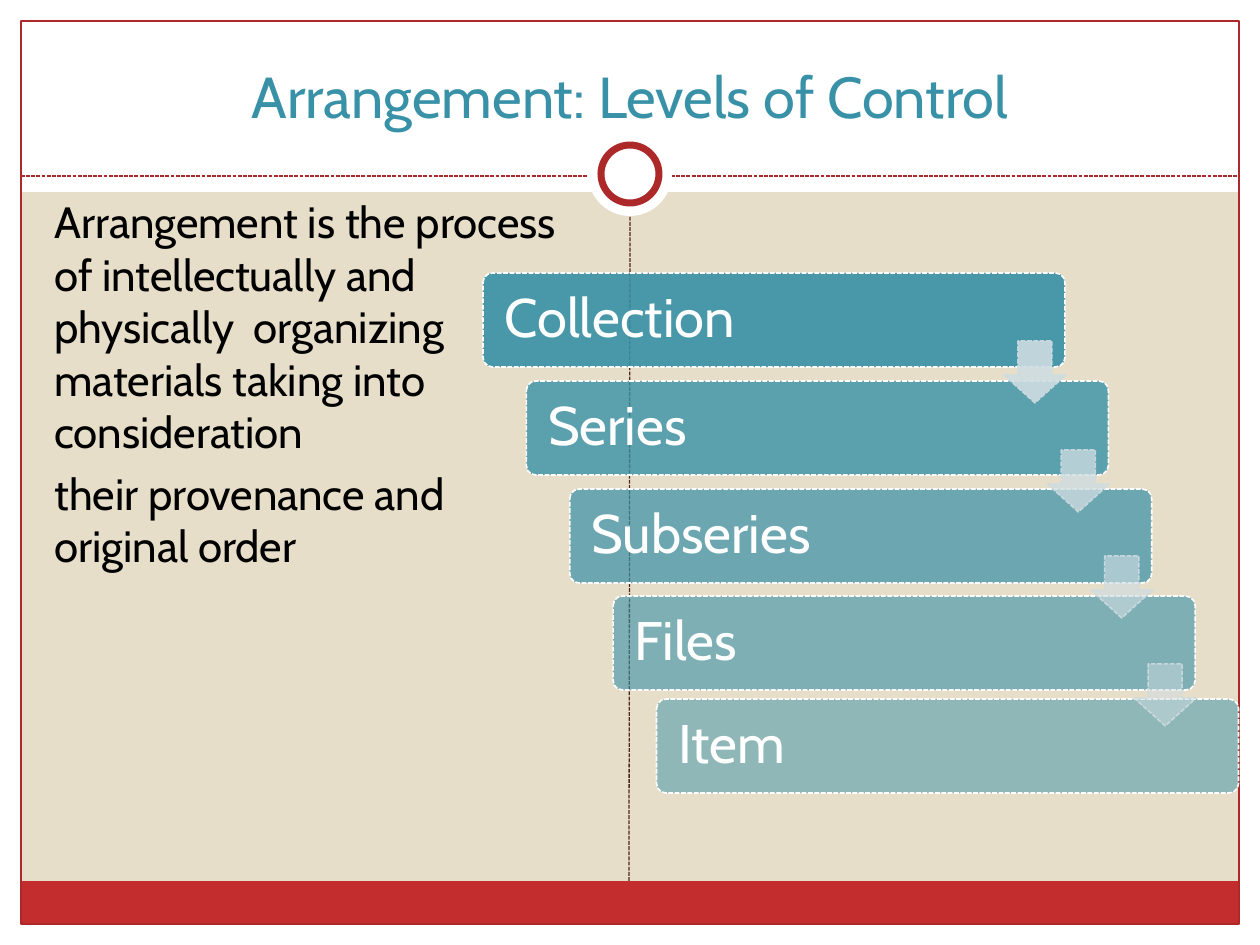
from lxml.etree import SubElement
from pptx import Presentation
from pptx.dml.color import RGBColor
from pptx.enum.dml import MSO_LINE
from pptx.enum.shapes import MSO_CONNECTOR, MSO_SHAPE as SHAPE
from pptx.enum.text import MSO_ANCHOR as ANCHOR, PP_ALIGN as ALIGN
from pptx.oxml.ns import qn
from pptx.util import Emu, Pt

# Content
TITLE = "Arrangement: Levels of Control"
BODY = [
    "Arrangement is the process of intellectually and physically  organizing "
    "materials taking into consideration",
    "their provenance and original order",
]
# level, top, opacity %
LEVELS = [
    ("Collection", 273, 90),
    ("Series", 381, 80),
    ("Subseries", 489, 70),
    ("Files", 596, 60),
    ("Item", 699, 50),
]
# top, opacity %
ARROWS = [(341, 90), (450, 77), (556, 63), (664, 50)]

THEME = {
    "font": "Cabin", "title_size": 33, "body_size": 25, "level_size": 31,
    "sand": "E7DEC9", "white": "FFFFFF", "black": "000000", "teal": "3891A7",
    "pale": "CEDCE1", "red": "C32D2E", "rule": "AC2829", "brown": "4F271C",
}

# Geometry in px
W, H = 1260, 945
EDGE = 21
LEVEL_X, LEVEL_W, LEVEL_H = 483, 582, 94
ARROW_X, ARROW_SIZE = 1004, 62
STEP = 43.4


def px(n):
    return Emu(round(n * 914400 / 126))


def color(name):
    return RGBColor.from_string(THEME[name])


def set_alpha(fill_owner, percent):
    for clr in fill_owner.iter(qn("a:srgbClr")):
        SubElement(clr, qn("a:alpha"), val=str(percent * 1000))


def style_line(line, name, width, dashed=False):
    line.color.rgb = color(name)
    line.width = Pt(width)
    if dashed:
        line.dash_style = MSO_LINE.SQUARE_DOT


def add_shape(s, kind, box, fill=None, line=None, width=0.75, dashed=False):
    sp = s.shapes.add_shape(kind, *map(px, box))
    sp.shadow.inherit = False
    if fill:
        sp.fill.solid()
        sp.fill.fore_color.rgb = color(fill)
    else:
        sp.fill.background()
    if line:
        style_line(sp.line, line, width, dashed)
    else:
        sp.line.fill.background()
    return sp


def add_rule(s, ends, name):
    rule = s.shapes.add_connector(MSO_CONNECTOR.STRAIGHT, *map(px, ends))
    style_line(rule.line, name, 0.75, dashed=True)
    SubElement(rule._element.spPr, qn("a:effectLst"))


def style_text(p, size, name, align=ALIGN.LEFT):
    p.alignment = align
    p.font.name = THEME["font"]
    p.font.size = Pt(THEME[size])
    p.font.color.rgb = color(name)


def add_frame(s):
    for box in [(0, H - EDGE, W, EDGE), (0, 0, W, 192),
                (0, 0, EDGE, H), (W - EDGE, 0, EDGE, H)]:
        add_shape(s, SHAPE.RECTANGLE, box, "white")
    inner = W - 2 * EDGE
    add_shape(s, SHAPE.RECTANGLE, (EDGE, 881, inner, 43), "red")
    add_shape(s, SHAPE.RECTANGLE, (EDGE, EDGE, inner, H - 2 * EDGE), line="rule")
    add_rule(s, (EDGE, 176, W - EDGE, 176), "rule")
    add_shape(s, SHAPE.OVAL, (588, 132, 84, 84), "white")
    add_shape(s, SHAPE.OVAL, (601, 145, 58, 58), "white", "rule", 4)
    add_rule(s, (629, 881, 630, 217), "brown")


def add_title(s):
    title = s.shapes.title
    title.left, title.top, title.width, title.height = map(px, (42, 32, 1176, 104))
    title.element.getparent().append(title.element)  # in front of the frame
    tf = title.text_frame
    tf.text = TITLE
    tf.vertical_anchor = ANCHOR.BOTTOM
    style_text(tf.paragraphs[0], "title_size", "teal", ALIGN.CENTER)


def add_body(s):
    tf = s.shapes.add_textbox(*map(px, (42, 189, 556, 645))).text_frame
    tf.word_wrap = True
    tf.text = "\n".join(BODY)
    for p in tf.paragraphs:
        style_text(p, "body_size", "black")
        p.space_before = Pt(5)


def add_levels(s):
    for i, (label, top, opacity) in enumerate(LEVELS):
        box = (LEVEL_X + i * STEP, top, LEVEL_W, LEVEL_H)
        sp = add_shape(s, SHAPE.ROUNDED_RECTANGLE, box, "teal", "white", 0.9, True)
        sp.adjustments[0] = 0.1
        set_alpha(sp.element.spPr.find(qn("a:solidFill")), opacity)
        tf = sp.text_frame
        tf.text = label
        tf.margin_left = px(19)
        tf.vertical_anchor = ANCHOR.MIDDLE
        p = tf.paragraphs[0]
        style_text(p, "level_size", "white")
        p.line_spacing = 0.9

    for i, (top, opacity) in enumerate(ARROWS):
        box = (ARROW_X + i * STEP, top, ARROW_SIZE, ARROW_SIZE)
        sp = add_shape(s, SHAPE.DOWN_ARROW, box, "pale", "pale", 0.9, True)
        sp.adjustments[0], sp.adjustments[1] = 0.55, 0.45
        set_alpha(sp.element.spPr.find(qn("a:solidFill")), opacity)
        set_alpha(sp.element.spPr.find(qn("a:ln")), 90)


def main():
    prs = Presentation()
    prs.slide_width, prs.slide_height = px(W), px(H)
    s = prs.slides.add_slide(prs.slide_layouts[5])
    s.background.fill.solid()
    s.background.fill.fore_color.rgb = color("sand")
    add_frame(s)
    add_title(s)
    add_body(s)
    add_levels(s)
    prs.save("out.pptx")


if __name__ == "__main__":
    main()
